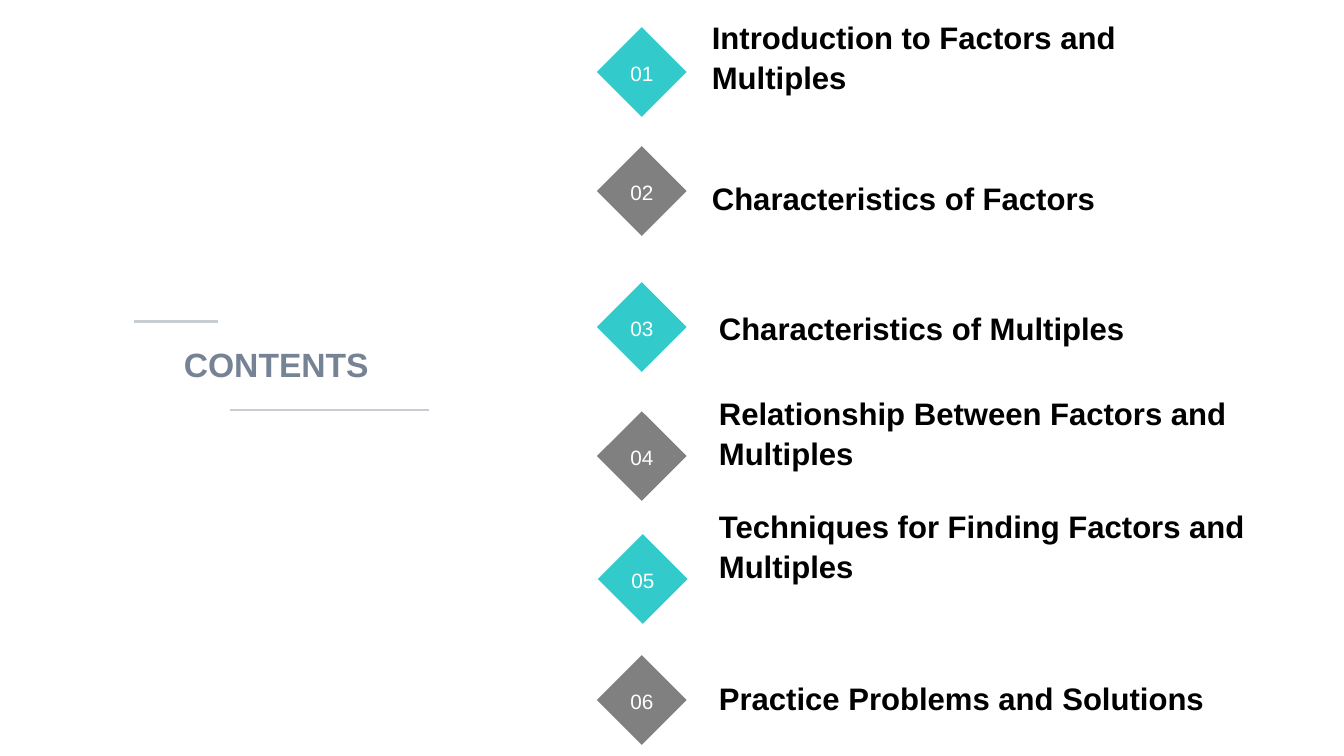
import dataclasses
import typing

import pptx
import pptx.dml.color
import pptx.enum.shapes
import pptx.enum.text
import pptx.oxml.ns
import pptx.util

Inches = pptx.util.Inches
ALIGN = pptx.enum.text.PP_ALIGN
ANCHOR = pptx.enum.text.MSO_ANCHOR


@dataclasses.dataclass(frozen=True)
class Theme:
    font: str = "Arial"
    teal: str = "32CACB"
    gray: str = "808080"
    white: str = "FFFFFF"
    black: str = "000000"
    slate: str = "768394"
    rule: str = "C8CDD4"
    number_size: float = 14.8
    topic_size: float = 22.2
    title_size: float = 24
    rule_width: float = 1.75
    line_spacing: float = 1.06


@dataclasses.dataclass(frozen=True)
class Topic:
    text: str
    diamond_left: float
    diamond_top: float
    text_left: float
    text_top: float


@dataclasses.dataclass(frozen=True)
class Rule:
    start: float
    end: float
    top: float


THEME = Theme()
DIAMOND_SIZE = 0.89
TOPIC_WIDTH, TOPIC_HEIGHT = 5.61, 0.4

TOPICS = [
    Topic("Introduction to Factors and Multiples", 5.92, 0.27, 6.99, 0.59),
    Topic("Characteristics of Factors", 5.92, 1.45, 6.99, 1.79),
    Topic("Characteristics of Multiples", 5.92, 2.8, 7.06, 3.08),
    Topic("Relationship Between Factors and Multiples", 5.92, 4.08, 7.06, 4.32),
    Topic("Techniques for Finding Factors and Multiples", 5.93, 5.3, 7.06, 5.44),
    Topic("Practice Problems and Solutions", 5.92, 6.5, 7.06, 6.75),
]
RULES = [Rule(2.16, 1.33, 3.19), Rule(2.28, 4.25, 4.07)]


def color(value: str) -> pptx.dml.color.RGBColor:
    return pptx.dml.color.RGBColor.from_string(value)


def apply(target: typing.Any, values: dict[str, typing.Any]) -> None:
    for name, value in values.items():
        setattr(target, name, value)


def write(shape: typing.Any, text: str, size: float, ink: str, bold: bool,
          align: ALIGN, frame_format: dict[str, typing.Any]) -> None:
    frame = shape.text_frame
    apply(frame, frame_format)
    para = frame.paragraphs[0]
    apply(para, {"alignment": align, "line_spacing": THEME.line_spacing})
    span = para.add_run()
    span.text = text
    apply(span.font, {"name": THEME.font, "size": pptx.util.Pt(size), "bold": bold})
    span.font.color.rgb = color(ink)


def add_diamond(page: typing.Any, topic: Topic, number: int) -> None:
    diamond = page.shapes.add_shape(
        pptx.enum.shapes.MSO_SHAPE.DIAMOND,
        Inches(topic.diamond_left), Inches(topic.diamond_top),
        Inches(DIAMOND_SIZE), Inches(DIAMOND_SIZE))
    diamond.shadow.inherit = False
    diamond.fill.solid()
    diamond.fill.fore_color.rgb = color(THEME.teal if number % 2 else THEME.gray)
    diamond.line.fill.background()
    write(diamond, f"{number:02}", THEME.number_size, THEME.white, False, ALIGN.CENTER,
          {"word_wrap": False, "vertical_anchor": ANCHOR.MIDDLE,
           "margin_left": 0, "margin_right": 0, "margin_top": 0, "margin_bottom": 0})


def add_topic_text(page: typing.Any, topic: Topic) -> None:
    box = page.shapes.add_textbox(Inches(topic.text_left), Inches(topic.text_top),
                                  Inches(TOPIC_WIDTH), Inches(TOPIC_HEIGHT))
    write(box, topic.text, THEME.topic_size, THEME.black, True, ALIGN.LEFT,
          {"word_wrap": True, "vertical_anchor": ANCHOR.BOTTOM,
           "margin_left": Inches(0.07), "margin_right": Inches(0.2),
           "margin_top": Inches(0.04), "margin_bottom": Inches(0.04)})


def add_title(page: typing.Any) -> None:
    box = page.shapes.add_textbox(Inches(1.65), Inches(3.34), Inches(2.18), Inches(0.58))
    write(box, "CONTENTS", THEME.title_size, THEME.slate, True, ALIGN.CENTER,
          {"word_wrap": True, "vertical_anchor": ANCHOR.TOP})


def add_rule(page: typing.Any, rule: Rule) -> None:
    line = page.shapes.add_connector(
        pptx.enum.shapes.MSO_CONNECTOR.STRAIGHT,
        Inches(rule.start), Inches(rule.top), Inches(rule.end), Inches(rule.top))
    line.line.color.rgb = color(THEME.rule)
    line.line.width = pptx.util.Pt(THEME.rule_width)
    properties = line._element.spPr
    properties.append(properties.makeelement(pptx.oxml.ns.qn("a:effectLst"), {}))


def main() -> None:
    deck = pptx.Presentation()
    apply(deck, {"slide_width": Inches(13.33), "slide_height": Inches(7.5)})
    page = deck.slides.add_slide(deck.slide_layouts[6])

    # Heading between two rules
    add_title(page)
    for rule in RULES:
        add_rule(page, rule)

    # Numbered topics
    for number, topic in enumerate(TOPICS, start=1):
        add_diamond(page, topic, number)
        add_topic_text(page, topic)

    deck.save("out.pptx")


if __name__ == "__main__":
    main()
